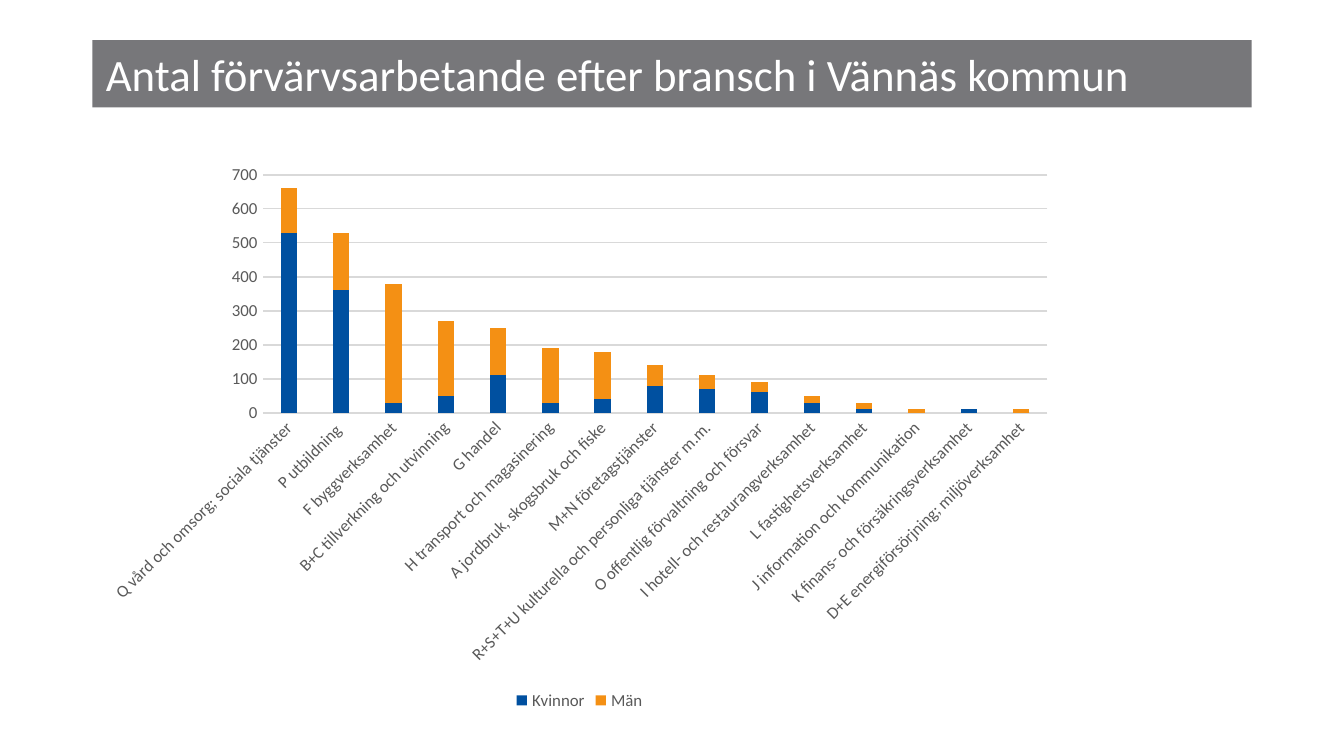
from pptx import Presentation
from pptx.chart.data import CategoryChartData
from pptx.dml.color import RGBColor
from pptx.enum.chart import XL_CHART_TYPE as ChartType
from pptx.enum.chart import XL_LEGEND_POSITION as LegendPosition
from pptx.enum.chart import XL_TICK_MARK as TickMark
from pptx.enum.text import MSO_ANCHOR as Anchor
from pptx.enum.text import PP_ALIGN as Align
from pptx.util import Pt

FONT = "Calibri"
COLORS = {
    "banner": "77777A",
    "title": "FFFFFF",
    "label": "595959",
    "grid": "D9D9D9",
    "Kvinnor": "0050A0",
    "Män": "F49014",
}
# Industry, women, men
EMPLOYED = [
    ("Q vård och omsorg; sociala tjänster", 530, 130),
    ("P utbildning ", 360, 170),
    ("F byggverksamhet", 30, 350),
    ("B+C tillverkning och utvinning", 50, 220),
    ("G handel", 110, 140),
    ("H transport och magasinering", 30, 160),
    ("A jordbruk, skogsbruk och fiske", 40, 140),
    ("M+N företagstjänster", 80, 60),
    ("R+S+T+U kulturella och personliga tjänster m.m.", 70, 40),
    ("O offentlig förvaltning och försvar", 60, 30),
    ("I hotell- och restaurangverksamhet", 30, 20),
    ("L fastighetsverksamhet", 10, 20),
    ("J information och kommunikation", 0, 10),
    ("K finans- och försäkringsverksamhet", 10, 0),
    ("D+E energiförsörjning; miljöverksamhet", 0, 10),
]


def color(name):
    return RGBColor.from_string(COLORS[name])


def set_all(target, values):
    for name, value in values.items():
        setattr(target, name, value)


def format_font(font, size, color_name):
    set_all(font, {"name": FONT, "size": Pt(size), "bold": False})
    font.color.rgb = color(color_name)


def fill_solid(part, color_name):
    part.fill.solid()
    part.fill.fore_color.rgb = color(color_name)


def format_line(line):
    line.color.rgb = color("grid")
    line.width = Pt(0.75)


def add_title(page, text):
    box = page.shapes.title
    set_all(box, {"left": Pt(49.5), "top": Pt(21.5),
                  "width": Pt(621), "height": Pt(36)})
    fill_solid(box, "banner")
    frame = box.text_frame
    set_all(frame, {"vertical_anchor": Anchor.MIDDLE, "word_wrap": True})
    para = frame.paragraphs[0]
    para.alignment = Align.LEFT
    span = para.add_run()
    span.text = text
    format_font(span.font, 24, "title")


def format_axes(chart):
    categories, values = chart.category_axis, chart.value_axis
    for axis in (categories, values):
        set_all(axis, {"major_tick_mark": TickMark.NONE,
                       "minor_tick_mark": TickMark.NONE})
        format_font(axis.tick_labels.font, 9, "label")
    format_line(categories.format.line)
    # Slant the category labels upwards by 45 degrees
    categories._element.txPr.bodyPr.set("rot", "-2700000")

    set_all(values, {"minimum_scale": 0, "maximum_scale": 700,
                     "major_unit": 100, "has_major_gridlines": True})
    set_all(values.tick_labels, {"number_format": "0",
                                 "number_format_is_linked": False})
    values.format.line.fill.background()
    format_line(values.major_gridlines.format.line)


def add_stacked_columns(page):
    industries, women, men = zip(*EMPLOYED)
    data = CategoryChartData()
    data.categories = industries
    data.add_series("Kvinnor", women)
    data.add_series("Män", men)
    chart = page.shapes.add_chart(
        ChartType.COLUMN_STACKED, Pt(49.5), Pt(82.4), Pt(522), Pt(301), data
    ).chart
    set_all(chart, {"has_title": False, "has_legend": True})
    set_all(chart.font, {"name": FONT, "size": Pt(10)})
    set_all(chart.legend, {"position": LegendPosition.BOTTOM,
                           "include_in_layout": False})
    format_font(chart.legend.font, 9, "label")
    set_all(chart.plots[0], {"gap_width": 219, "overlap": 100,
                             "vary_by_categories": False})
    for series in chart.plots[0].series:
        fill_solid(series.format, series.name)
    format_axes(chart)


def main():
    deck = Presentation()
    set_all(deck, {"slide_width": Pt(720), "slide_height": Pt(405)})
    page = deck.slides.add_slide(deck.slide_layouts.get_by_name("Title Only"))
    add_title(page, "Antal förvärvsarbetande efter bransch i Vännäs kommun")
    add_stacked_columns(page)
    deck.save("out.pptx")


if __name__ == "__main__":
    main()
